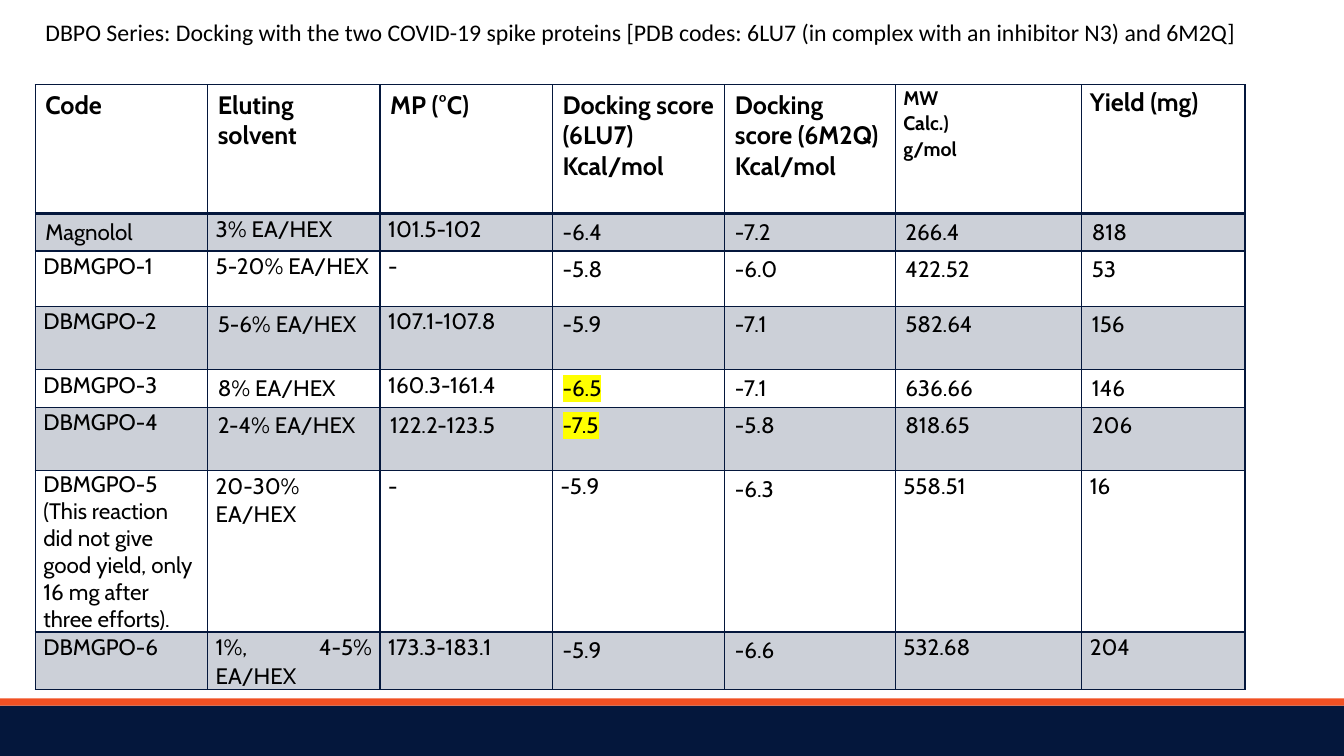
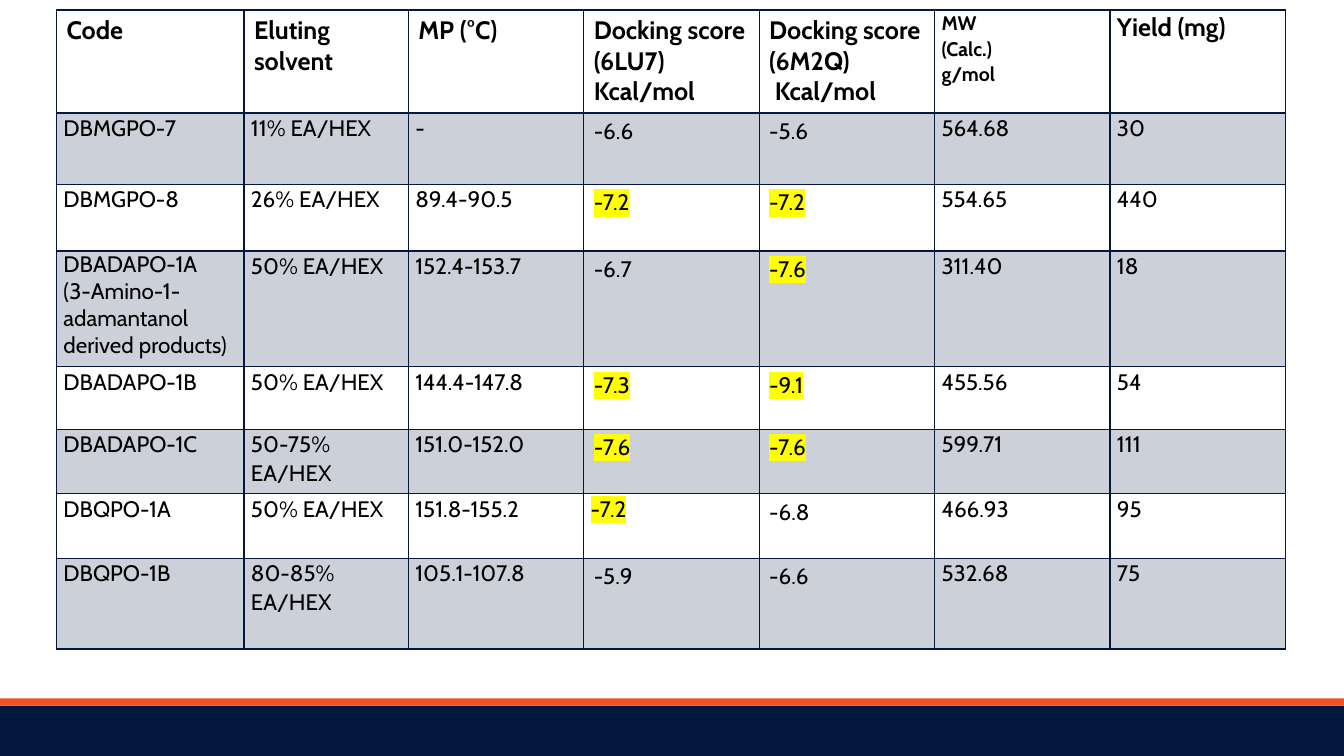
from dataclasses import dataclass

from lxml.etree import SubElement
from pptx import Presentation
from pptx.dml.color import RGBColor
from pptx.enum.shapes import MSO_SHAPE
from pptx.enum.text import MSO_ANCHOR, MSO_AUTO_SIZE, PP_ALIGN
from pptx.oxml import parse_xml
from pptx.oxml.ns import nsdecls, qn
from pptx.slide import Slide
from pptx.table import _Cell as Cell
from pptx.util import Inches, Pt

COLORS = {
    "navy": "04173C",
    "orange": "F05023",
    "black": "000000",
    "yellow": "FFFF00",
}
PAGE_WIDTH, PAGE_HEIGHT = 13.33, 7.5
TABLE_FONT, TITLE_FONT = "Cabin", "Calibri"
TITLE_ONLY, BLANK = 5, 6


@dataclass(frozen=True)
class Band:
    top: float
    height: float
    color: str


@dataclass(frozen=True)
class Row:
    """One table row; styles holds one letter per cell.

    R roomy, T tight and justified, L tight and left aligned,
    H roomy and highlighted, J tight, justified and highlighted.
    """
    height: float
    styles: str
    texts: tuple[str, ...]


@dataclass(frozen=True)
class ResultTable:
    left: float
    top: float
    tight_inset: float
    widths: tuple[float, ...]
    rows: tuple[Row, ...]


BANDS = (Band(7, 0.5, "navy"), Band(6.93, 0.07, "orange"))
TITLE = ("DBPO Series: Docking with the two COVID-19 spike proteins "
         "[PDB codes: 6LU7 (in complex with an inhibitor N3) and 6M2Q]")

FIRST_RESULTS = ResultTable(
    0.35, 0.84, 0.08, (1.71,) * 4 + (1.69, 1.85, 1.62),
    (
        Row(1.28, "RRRRRTT", (
            "Code", "Eluting solvent", "MP (°C)", "Docking score (6LU7) Kcal/mol",
            "Docking score (6M2Q) Kcal/mol", "MW\nCalc.)\ng/mol", "Yield (mg)")),
        Row(0.37, "RTTRRRR", (
            "Magnolol", "3% EA/HEX", "101.5-102", "-6.4", "-7.2", "266.4", "818")),
        Row(0.55, "TTTRRRR", (
            "DBMGPO-1", "5-20% EA/HEX", "-", "-5.8", "-6.0", "422.52", "53")),
        Row(0.63, "TRTRRRR", (
            "DBMGPO-2", "5-6% EA/HEX", "107.1-107.8", "-5.9", "-7.1", "582.64", "156")),
        Row(0.37, "TRTHRRR", (
            "DBMGPO-3", "8% EA/HEX", "160.3-161.4", "-6.5", "-7.1", "636.66", "146")),
        Row(0.63, "TRRHRRR", (
            "DBMGPO-4", "2-4% EA/HEX", "122.2-123.5", "-7.5", "-5.8", "818.65", "206")),
        Row(1.45, "LTTTRTT", (
            "DBMGPO-5\n(This reaction did not give good yield, only 16 mg after "
            "three efforts).",
            "20-30% EA/HEX", "-", "-5.9", "-6.3", "558.51", "16")),
        Row(0.55, "TTTRRTT", (
            "DBMGPO-6", "1%, 4-5% EA/HEX", "173.3-183.1", "-5.9", "-6.6", "532.68",
            "204")),
    ),
)

SECOND_RESULTS = ResultTable(
    0.56, 0.1, 0.07, (1.86, 1.63) + (1.74,) * 5,
    (
        Row(1.02, "RRRRRTT", (
            "Code", "Eluting solvent", "MP (°C)", "Docking score (6LU7)\nKcal/mol",
            "Docking score (6M2Q)\n Kcal/mol", "MW\n(Calc.)\ng/mol", "Yield (mg)")),
        Row(0.71, "TTTRRTT", (
            "DBMGPO-7", "11% EA/HEX", "-", "-6.6", "-5.6", "564.68", "30")),
        Row(0.66, "TTTHHTT", (
            "DBMGPO-8", "26% EA/HEX", "89.4-90.5", "-7.2", "-7.2", "554.65", "440")),
        Row(1.15, "LTTRHTT", (
            "DBADAPO-1A\n(3-Amino-1-adamantanol derived products)", "50% EA/HEX",
            "152.4-153.7", "-6.7", "-7.6", "311.40", "18")),
        Row(0.62, "TTTHHTT", (
            "DBADAPO-1B", "50% EA/HEX", "144.4-147.8", "-7.3", "-9.1", "455.56", "54")),
        Row(0.64, "TTTHHTT", (
            "DBADAPO-1C", "50-75% EA/HEX", "151.0-152.0", "-7.6", "-7.6", "599.71",
            "111")),
        Row(0.64, "TTTJRTT", (
            "DBQPO-1A", "50% EA/HEX", "151.8-155.2", "-7.2", "-6.8", "466.93", "95")),
        Row(0.9, "TTTRRTT", (
            "DBQPO-1B", "80-85% EA/HEX", "105.1-107.8", "-5.9", "-6.6", "532.68", "75")),
    ),
)


def rgb(name: str) -> RGBColor:
    return RGBColor.from_string(COLORS[name])


def add_bands(page: Slide) -> None:
    for band in BANDS:
        box = page.shapes.add_shape(
            MSO_SHAPE.RECTANGLE, Inches(0), Inches(band.top),
            Inches(PAGE_WIDTH), Inches(band.height))
        box.shadow.inherit = False
        box.fill.solid()
        box.fill.fore_color.rgb = rgb(band.color)
        box.line.fill.background()


def set_title(page: Slide, text: str) -> None:
    title = page.shapes.title
    title.left, title.top = Inches(0.35), Inches(0.13)
    title.width, title.height = Inches(12.63), Inches(0.69)
    frame = title.text_frame
    frame.text = text
    frame.word_wrap = True
    frame.auto_size = MSO_AUTO_SIZE.SHAPE_TO_FIT_TEXT
    frame.vertical_anchor = MSO_ANCHOR.TOP
    para = frame.paragraphs[0]
    para.alignment = PP_ALIGN.LEFT
    font = para.runs[0].font
    font.name, font.size = TITLE_FONT, Pt(17)
    font.color.rgb = rgb("black")


def set_borders(cell: Cell, row_index: int) -> None:
    """Draw a thin navy grid with a thicker rule below the header."""
    properties = cell._tc.get_or_add_tcPr()
    thick_side = {0: "lnB", 1: "lnT"}.get(row_index)
    for side in ("lnL", "lnR", "lnT", "lnB"):
        width = Pt(2 if side == thick_side else 1)
        properties.append(parse_xml(
            f'<a:{side} {nsdecls("a")} w="{width}"><a:solidFill>'
            f'<a:srgbClr val="{COLORS["navy"]}"/></a:solidFill></a:{side}>'))


def set_fill(cell: Cell, shaded: bool) -> None:
    if not shaded:
        cell.fill.background()
        return
    cell.fill.solid()
    cell.fill.fore_color.rgb = rgb("navy")
    color = cell._tc.tcPr.find(f'{qn("a:solidFill")}/{qn("a:srgbClr")}')
    SubElement(color, qn("a:alpha"), val="20000")


def set_text(cell: Cell, text: str, style: str, size: int, bold: bool,
             tight_inset: float) -> None:
    tight = style in "TLJ"
    cell.margin_left = cell.margin_right = Inches(tight_inset if tight else 0.1)
    cell.margin_top = cell.margin_bottom = Inches(0 if tight else 0.05)
    cell.text_frame.text = text
    for para in cell.text_frame.paragraphs:
        if style in "TJ":
            para.alignment = PP_ALIGN.JUSTIFY
            para.line_spacing = 1.07
        for span in para.runs:
            font = span.font
            font.name, font.size, font.bold = TABLE_FONT, Pt(size), bold
            font.color.rgb = rgb("black")
            if style in "HJ":
                span._r.rPr.find(qn("a:solidFill")).addnext(parse_xml(
                    f'<a:highlight {nsdecls("a")}>'
                    f'<a:srgbClr val="{COLORS["yellow"]}"/></a:highlight>'))


def add_results(page: Slide, results: ResultTable) -> None:
    frame = page.shapes.add_table(
        len(results.rows), len(results.widths),
        Inches(results.left), Inches(results.top),
        Inches(sum(results.widths)), Inches(sum(row.height for row in results.rows)))
    table = frame.table
    table.first_row = table.horz_banding = False
    for column, width in zip(table.columns, results.widths):
        column.width = Inches(width)

    for row_index, row in enumerate(results.rows):
        table.rows[row_index].height = Inches(row.height)
        header = row_index == 0
        for column_index, (style, text) in enumerate(zip(row.styles, row.texts)):
            cell = table.cell(row_index, column_index)
            set_borders(cell, row_index)
            set_fill(cell, shaded=row_index % 2 == 1)
            # The three-line weight heading is smaller than the others
            header_size = 14 if text.startswith("MW") else 18
            set_text(cell, text, style, header_size if header else 16, header,
                     results.tight_inset)


def main() -> None:
    deck = Presentation()
    deck.slide_width, deck.slide_height = Inches(PAGE_WIDTH), Inches(PAGE_HEIGHT)

    # Magnolol and the first six products
    page = deck.slides.add_slide(deck.slide_layouts[TITLE_ONLY])
    add_bands(page)
    set_title(page, TITLE)
    add_results(page, FIRST_RESULTS)

    # Remaining products
    page = deck.slides.add_slide(deck.slide_layouts[BLANK])
    add_bands(page)
    add_results(page, SECOND_RESULTS)

    deck.save("out.pptx")


if __name__ == "__main__":
    main()
